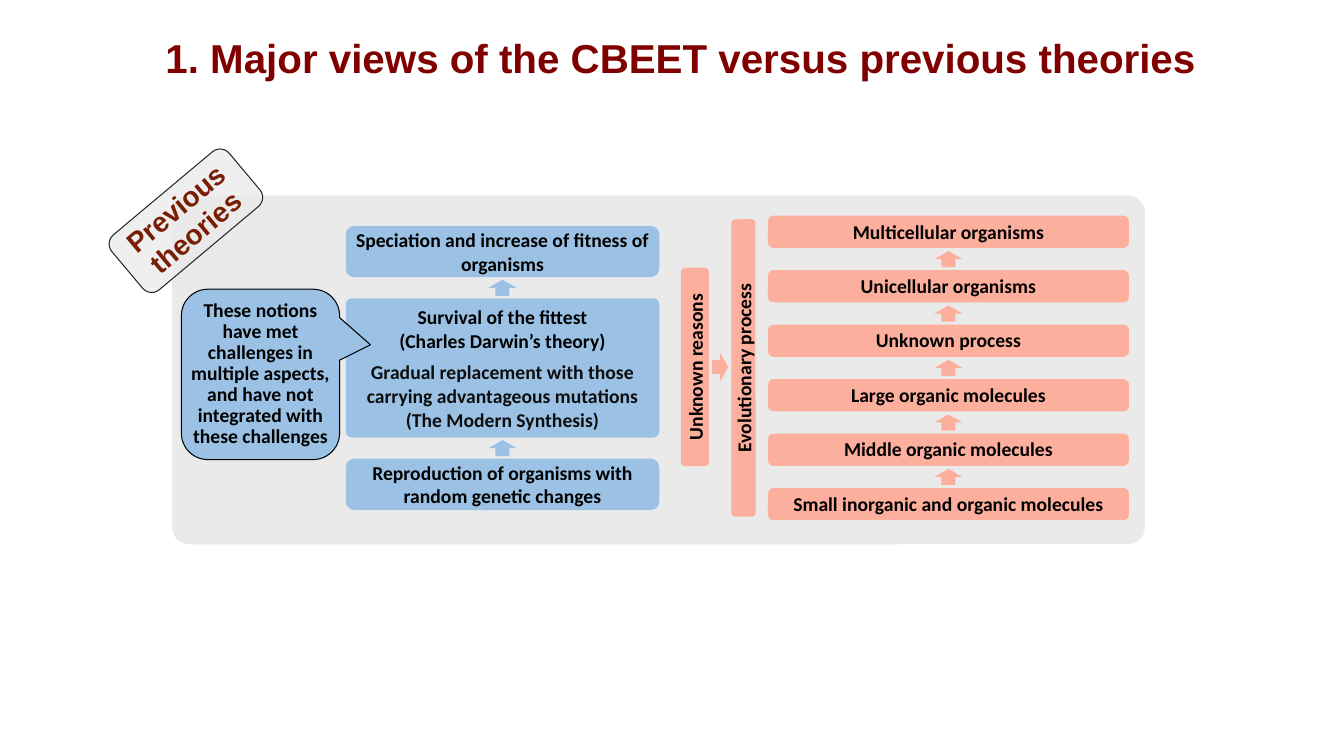
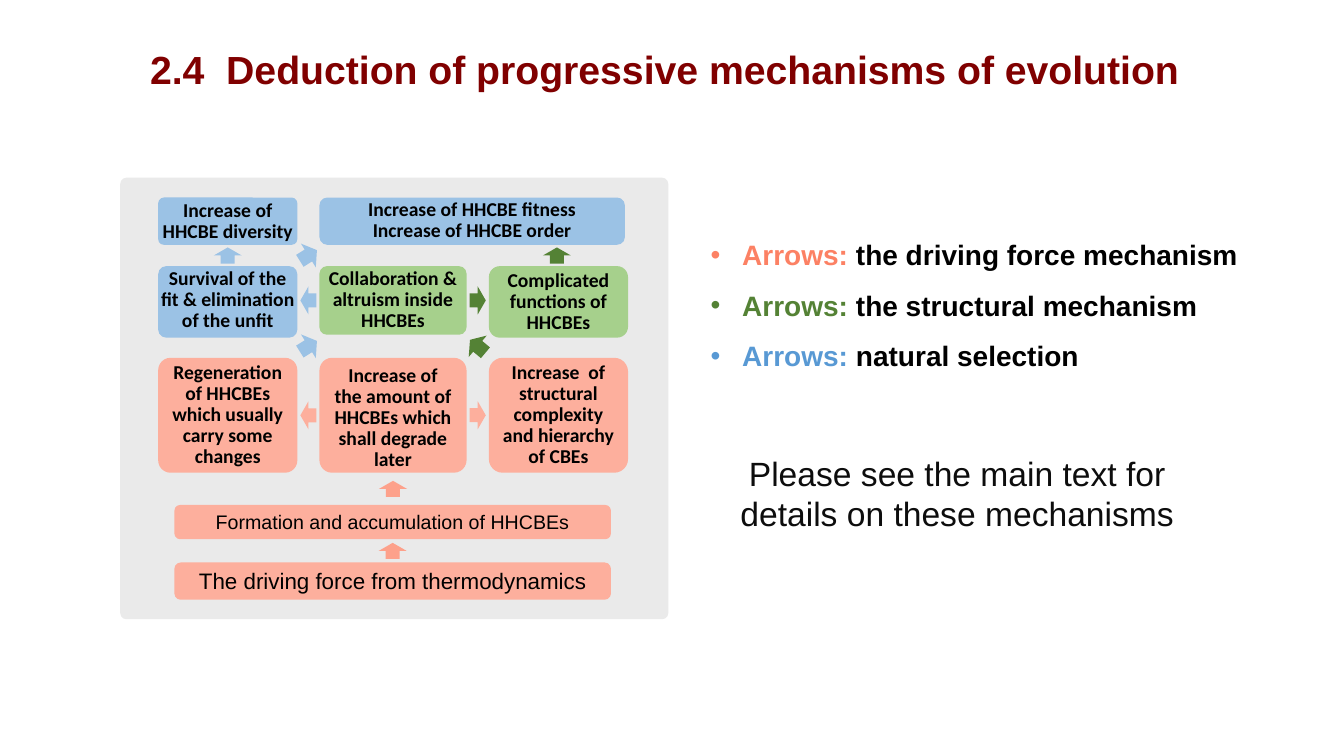
"""Build two slides that compare theories of evolution."""
from pptx import Presentation
from pptx.dml.color import RGBColor
from pptx.enum.shapes import MSO_SHAPE
from pptx.enum.text import MSO_ANCHOR, MSO_AUTO_SIZE, PP_ALIGN
from pptx.oxml.ns import qn
from pptx.util import Pt
from lxml.etree import SubElement


class Theme:
    """Hold the colours, fonts and sizes of the deck."""
    panel, blue, pink, green = "EAEAEA", "9BC2E5", "FDAF9D", "A6D08C"
    coral, leaf, black, ink = "FDA18B", "548235", "000000", "0D0D0D"
    title, tag, edge = "800000", "791E05", "262626"
    warm, cool = "FC8164", "5899D4"
    sans, label = "Arial", "Calibri"
    small, mid, list, note = 14, 16, 20, 24


RIGHT, LEFT, UP = 0, 180, 270
RISE, BACK = 328, 220

CHAIN = ["Multicellular organisms", "Unicellular organisms", "Unknown process",
         "Large organic molecules", "Middle organic molecules",
         "Small inorganic and organic molecules"]
TIGHT = {"inset": (3, 3)}
SIDE = {"inset": (6, 0)}
LEAD = {"lead": Pt(15)}

VIEWS = {
    "head": "1. Major views of the CBEET versus previous theories",
    "place": (111, 16.5, 774, 54), "size": 28.8,
    "panel": (123, 139.7, 694.8, 249.1), "round": 12,
    "boxes": {
        "birth": ((247, 327.6, 223.9, 36.7), Theme.blue, 6,
                  ["Reproduction of organisms with random genetic changes"], TIGHT),
        "fit": ((247, 213.1, 223.9, 99.4), Theme.blue, 4.3,
                ["Survival of the fittest", "(Charles Darwin’s theory)",
                 [("Gradual replacement with those carrying advantageous mutations",
                   Theme.ink)],
                 [("(The Modern Synthesis)", Theme.ink)]],
                {"inset": (7, 0), "gaps": {2: 6}}),
        "gain": ((247, 161.3, 223.9, 36.7), Theme.blue, 6,
                 ["Speciation and increase of fitness of organisms"], TIGHT),
        "cause": ((486.3, 191.2, 20.2, 141.8), Theme.pink, 3.4,
                  ["Unknown reasons"], {"inset": (0, 3), "turn": UP}),
        "course": ((522.4, 156.6, 17.3, 212.4), Theme.pink, 2.9,
                   ["Evolutionary process"], {**SIDE, "turn": UP}),
        **{name: ((548.6, 154.1 + 38.9 * row, 257.8, 23), Theme.pink, 3.8,
                  [name], {**SIDE, "lead": Pt(16)})
           for row, name in enumerate(CHAIN)},
    },
    "arrows": [("birth", "fit", UP, Theme.blue), ("fit", "gain", UP, Theme.blue),
               ("cause", "course", RIGHT, Theme.pink)]
              + [(low, top, UP, Theme.pink) for top, low in zip(CHAIN, CHAIN[1:])],
}
CALL = ["These notions have met challenges in multiple aspects, "
        "and have not integrated with these challenges"]

COLS = [(113, 99.4), (228.2, 105.1), (349.2, 99.4)]
ROWS = [(141.1, 33.8), (190.1, 51.1), (255.6, 82.1)]


def cell(col, row):
    """Return the place of a grid cell."""
    (left, wide), (top, high) = COLS[col], ROWS[row]
    return left, top, wide, high


PLAIN = {"inset": (3, 3), "font": Theme.sans, "bold": False}
STEPS = {
    "head": "2.4  Deduction of progressive mechanisms of evolution",
    "place": (100, 3.6, 760, 95), "size": 28,
    "panel": (85.9, 126.9, 391.5, 315.4), "round": 4.4,
    "boxes": {
        "force": ((124.6, 401.8, 311.8, 26.6), Theme.pink, 4.4,
                  ["The driving force from thermodynamics"],
                  {**PLAIN, "size": Theme.mid, "lead": Pt(18)}),
        "form": ((124.6, 360.7, 311.8, 24.5), Theme.pink, 4.1,
                 ["Formation and accumulation of HHCBEs"],
                 {**PLAIN, "lead": Pt(16)}),
        "renew": (cell(0, 2), Theme.pink, 8.8,
                  ["Regeneration", "of HHCBEs which usually carry some", "changes"],
                  {**LEAD, **TIGHT}),
        "amount": (cell(1, 2), Theme.pink, 9,
                   ["Increase of", "the amount of HHCBEs which shall degrade later"],
                   {**LEAD, **TIGHT, "anchor": MSO_ANCHOR.TOP}),
        "complex": (cell(2, 2), Theme.pink, 9.8,
                    ["Increase  of structural complexity and hierarchy of CBEs"],
                    {**LEAD, **TIGHT}),
        "live": (cell(0, 1), Theme.blue, 5.8,
                 ["Survival of the fit & elimination of the unfit"],
                 {**LEAD, "anchor": MSO_ANCHOR.TOP}),
        "share": ((*cell(1, 1)[:3], 49), Theme.green, 5.4,
                  ["Collaboration & altruism inside HHCBEs"],
                  {**LEAD, "anchor": MSO_ANCHOR.TOP}),
        "work": (cell(2, 1), Theme.green, 7.8,
                 ["Complicated functions of HHCBEs"], LEAD),
        "range": (cell(0, 0), Theme.blue, 4.1,
                  ["Increase of HHCBE diversity"], {**LEAD, "inset": (0, 3)}),
        "order": ((228.2, 141.1, 218.2, 33.8), Theme.blue, 5.6,
                  ["Increase of HHCBE fitness", "Increase of HHCBE order"],
                  {**LEAD, "anchor": MSO_ANCHOR.TOP}),
    },
    "arrows": [
        ("force", "form", UP, Theme.coral), ("form", "amount", UP, Theme.coral),
        ("amount", "renew", LEFT, Theme.pink),
        ("amount", "complex", RIGHT, Theme.pink),
        ("renew", "share", RISE, Theme.blue), ("complex", "share", BACK, Theme.leaf),
        ("share", "live", LEFT, Theme.blue), ("share", "work", RIGHT, Theme.leaf),
        ("live", "range", UP, Theme.blue), ("live", "order", RISE, Theme.blue),
        ("work", "order", UP, Theme.leaf)],
}
KEYS = [[("Arrows: ", color), (name, Theme.black)] for color, name in [
    (Theme.warm, "the driving force mechanism"),
    (Theme.leaf, "the structural mechanism"),
    (Theme.cool, "natural selection")]]
NOTE = ["Please see the main text for details on these mechanisms"]


def text(shape, lines, size=Theme.small, font=Theme.label, color=Theme.black,
         bold=True, align=PP_ALIGN.CENTER, anchor=MSO_ANCHOR.MIDDLE,
         inset=(0, 0), lead=None, gaps=None):
    """Write lines, each a string or a list of coloured runs."""
    frame = shape.text_frame
    frame.word_wrap = True
    frame.auto_size = MSO_AUTO_SIZE.NONE
    frame.vertical_anchor = anchor
    frame.margin_left = frame.margin_right = Pt(inset[0])
    frame.margin_top = frame.margin_bottom = Pt(inset[1])
    for pos, line in enumerate(lines):
        para = frame.add_paragraph() if pos else frame.paragraphs[0]
        para.alignment = align
        para.space_before = Pt((gaps or {}).get(pos, 0))
        if lead:
            para.line_spacing = lead
        for words, tint in [(line, color)] if isinstance(line, str) else line:
            run = para.add_run()
            run.text = words
            run.font.size, run.font.name, run.font.bold = Pt(size), font, bold
            run.font.color.rgb = RGBColor.from_string(tint)


def put(shape, place):
    """Set the place of a shape."""
    shape.left, shape.top, shape.width, shape.height = map(Pt, place)


def draw(slide, kind, place, fill, turn=0, line=None):
    """Add a preset shape; the place is as seen after a quarter turn."""
    left, top, wide, high = place
    if turn in (90, 270):
        left, top = left + (wide - high) / 2, top + (high - wide) / 2
        wide, high = high, wide
    shape = slide.shapes.add_shape(kind, *map(Pt, (left, top, wide, high)))
    shape.rotation = turn
    shape.shadow.inherit = False
    shape.fill.solid()
    shape.fill.fore_color.rgb = RGBColor.from_string(fill)
    if line:
        shape.line.color.rgb = RGBColor.from_string(line)
        shape.line.width = Pt(0.75)
    else:
        shape.line.fill.background()
    return shape


def box(slide, place, fill, curve, lines=(), turn=0, **style):
    """Add a rounded box with a corner radius in points."""
    shape = draw(slide, MSO_SHAPE.ROUNDED_RECTANGLE, place, fill, turn)
    shape.adjustments[0] = curve / min(place[2:])
    text(shape, lines, **style)


def arrow(slide, start, end, turn, fill):
    """Centre an arrow in the gap or overlap of two places."""
    mid = [(max(start[i], end[i]) + min(start[i] + start[i + 2], end[i] + end[i + 2])) / 2
           for i in (0, 1)]
    size = (14.4, 20) if turn in (RISE, BACK) else (11.5, 20)
    if turn == UP:
        size = size[::-1]
    place = (mid[0] - size[0] / 2, mid[1] - size[1] / 2, *size)
    draw(slide, MSO_SHAPE.RIGHT_ARROW, place, fill, turn)


def page(deck, layout, data):
    """Add a slide with its title, panel, boxes and arrows."""
    slide = deck.slides.add_slide(deck.slide_layouts[layout])
    put(slide.shapes.title, data["place"])
    text(slide.shapes.title, [data["head"]], size=data["size"], font=Theme.sans,
         color=Theme.title, align=PP_ALIGN.LEFT, inset=(7.2, 3.6), lead=0.9)
    box(slide, data["panel"], Theme.panel, data["round"])
    boxes = data["boxes"]
    for place, fill, curve, lines, style in boxes.values():
        box(slide, place, fill, curve, lines, **style)
    for start, end, turn, fill in data["arrows"]:
        arrow(slide, boxes[start][0], boxes[end][0], turn, fill)
    return slide


def views(deck):
    """Build the slide on previous theories."""
    slide = page(deck, 5, VIEWS)
    call = draw(slide, MSO_SHAPE.ROUNDED_RECTANGULAR_CALLOUT,
                (129.6, 206.6, 113, 121.7), Theme.blue, line=Theme.black)
    for pos, value in enumerate((0.695, -0.174, 0.167)):
        call.adjustments[pos] = value
    text(call, CALL, inset=(0, 6), **LEAD)
    tag = draw(slide, MSO_SHAPE.ROUNDED_RECTANGLE, (78.1, 132.1, 109.4, 51.1),
               Theme.panel, 320, Theme.edge)
    tint = tag.fill._xPr.find(qn("a:solidFill"))[0]
    SubElement(tint, qn("a:alpha")).set("val", "74000")
    text(tag, ["Previous theories"], size=Theme.list, font=Theme.sans,
         color=Theme.tag, inset=(3, 0), lead=Pt(22))


def steps(deck):
    """Build the slide on progressive mechanisms."""
    slide = page(deck, 1, STEPS)
    keys = slide.placeholders[1]
    put(keys, (500.4, 166.3, 415.4, 104.4))
    text(keys, KEYS, size=Theme.list, font=Theme.sans, align=PP_ALIGN.LEFT,
         anchor=MSO_ANCHOR.TOP, inset=(7.2, 3.6), gaps={1: 12, 2: 12})
    for para in keys.text_frame.paragraphs:
        props = para._p.get_or_add_pPr()
        props.set("marL", str(Pt(22.5)))
        props.set("indent", str(-Pt(22.5)))
        SubElement(props, qn("a:buChar")).set("char", "•")
    note = slide.shapes.add_textbox(*map(Pt, (517.7, 319.7, 331.9, 65.5)))
    text(note, NOTE, size=Theme.note, font=Theme.sans, color=Theme.ink,
         bold=False, anchor=MSO_ANCHOR.TOP, inset=(7.2, 3.6))


def main():
    """Build and save the deck."""
    deck = Presentation()
    deck.slide_width, deck.slide_height = Pt(960), Pt(540)
    views(deck)
    steps(deck)
    deck.save("out.pptx")


if __name__ == "__main__":
    main()
